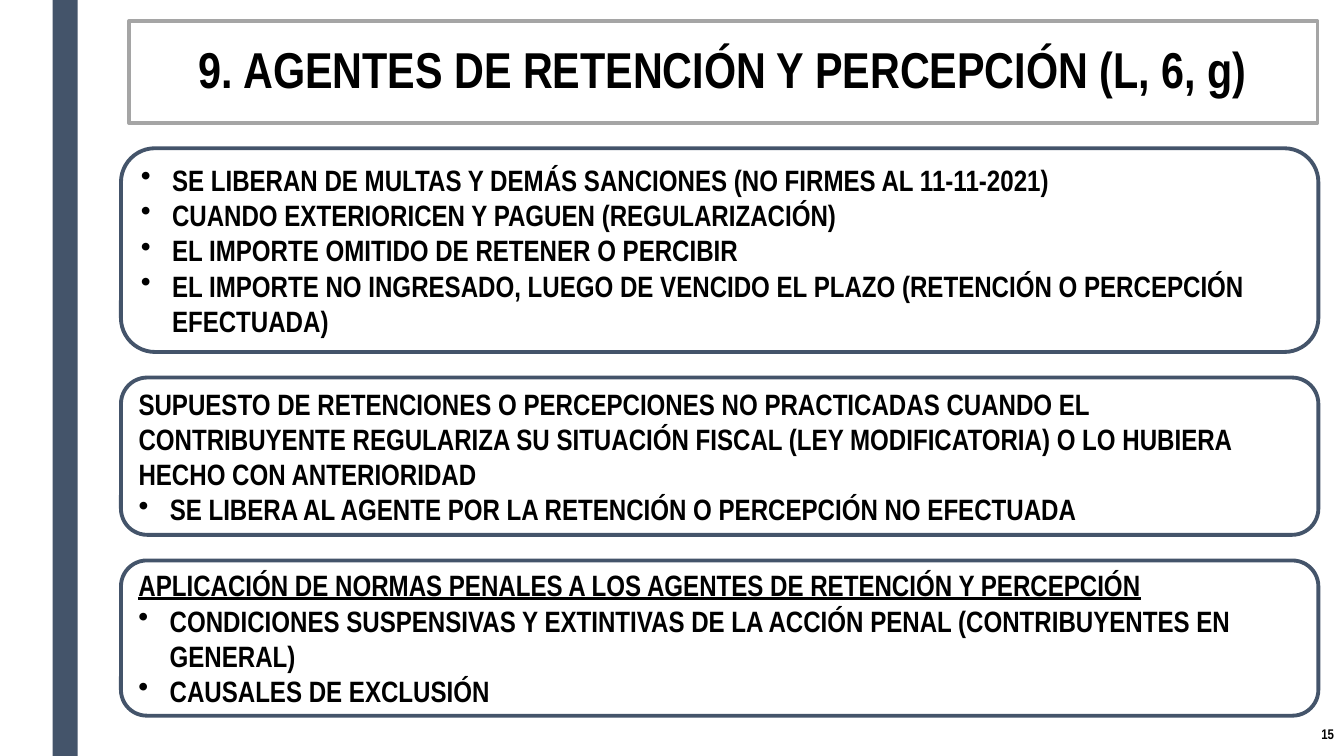
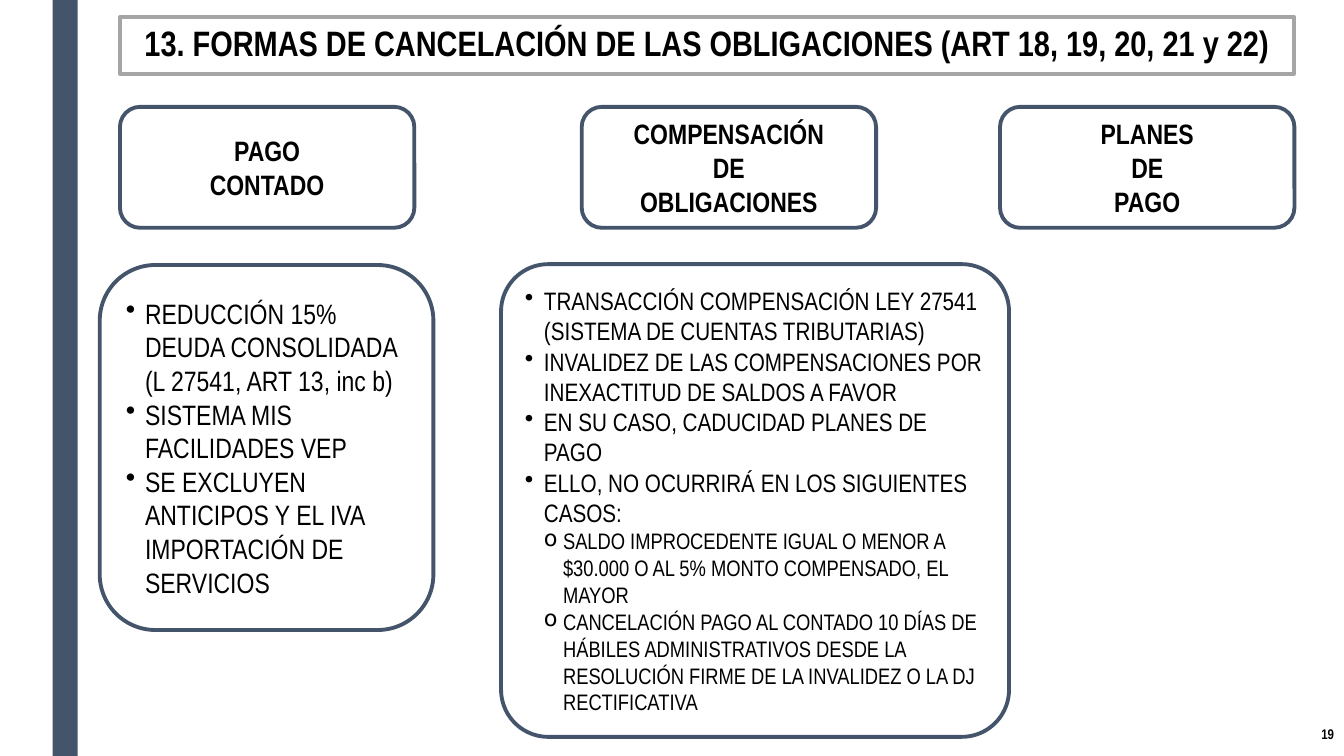
"""Build two slides on withholding agents and ways of settling tax obligations."""

import dataclasses
import typing

import lxml.etree
import pptx
import pptx.dml.color
import pptx.enum.shapes
import pptx.enum.text
import pptx.oxml.ns
import pptx.presentation
import pptx.shapes.autoshape
import pptx.slide
import pptx.util

COLORS = {"navy": "44546A", "gray": "A5A5A5", "white": "FFFFFF", "black": "000000"}
FONT_NAME = "Arial Narrow"
CELL = pptx.util.Emu(190500)
COLUMNS, ROWS = 64, 36
LINE_WIDTH = pptx.util.Pt(2.75)
ALIGN = pptx.enum.text.PP_ALIGN
SHAPE = pptx.enum.shapes.MSO_SHAPE


class Area(typing.NamedTuple):
    """A rectangle in grid columns and rows."""

    left: float
    top: float
    width: float
    height: float

    def lengths(self) -> list[int]:
        return [round(value * CELL) for value in self]


@dataclasses.dataclass(frozen=True)
class Item:
    """One paragraph, with its bullet and indent when it has one."""

    text: str
    size: float
    bold: bool = False
    underline: bool = False
    bullet: str = ""
    indent: float = 0
    level: int = 0
    alignment: ALIGN = ALIGN.LEFT


@dataclasses.dataclass(frozen=True)
class Box:
    """A rounded box and its paragraphs."""

    area: Area
    items: list[Item]
    rounding: float = 0.1667


def color(name: str) -> pptx.dml.color.RGBColor:
    return pptx.dml.color.RGBColor.from_string(COLORS[name])


def set_attributes(target: typing.Any, values: dict[str, typing.Any]) -> None:
    for name, value in values.items():
        setattr(target, name, value)


def paint(shape: pptx.shapes.autoshape.Shape, fill: str, line: str) -> None:
    shape.fill.solid()
    shape.fill.fore_color.rgb = color(fill)
    shape.line.color.rgb = color(line)
    shape.line.width = LINE_WIDTH
    shape.shadow.inherit = False


def add_bullet(paragraph: typing.Any, item: Item) -> None:
    properties = paragraph._p.get_or_add_pPr()
    hanging = pptx.util.Inches(item.indent)
    properties.set("marL", str(hanging * (item.level + 1)))
    properties.set("indent", str(-hanging))
    tag = pptx.oxml.ns.qn("a:buChar")
    lxml.etree.SubElement(properties, tag).set("char", item.bullet)


def write(shape: pptx.shapes.autoshape.Shape, items: list[Item]) -> None:
    frame = shape.text_frame
    set_attributes(frame, {
        "word_wrap": True,
        "auto_size": pptx.enum.text.MSO_AUTO_SIZE.NONE,
        "vertical_anchor": pptx.enum.text.MSO_ANCHOR.MIDDLE,
    })
    for index, item in enumerate(items):
        paragraph = frame.add_paragraph() if index else frame.paragraphs[0]
        paragraph.text = item.text
        set_attributes(paragraph, {"level": item.level, "alignment": item.alignment})
        if item.bullet:
            add_bullet(paragraph, item)
        set_attributes(paragraph.runs[0].font, {
            "name": FONT_NAME,
            "size": pptx.util.Pt(item.size),
            "bold": item.bold,
            "underline": item.underline,
        })
        paragraph.runs[0].font.color.rgb = color("black")


def add_box(slide: pptx.slide.Slide, box: Box) -> None:
    shape = slide.shapes.add_shape(SHAPE.ROUNDED_RECTANGLE, *box.area.lengths())
    shape.adjustments[0] = box.rounding
    paint(shape, "white", "navy")
    write(shape, box.items)


def add_side_band(slide: pptx.slide.Slide) -> None:
    area = Area(2.5, 0, 1.2, ROWS)
    band = slide.shapes.add_shape(SHAPE.RECTANGLE, *area.lengths())
    paint(band, "navy", "navy")
    band.line.fill.background()
    slide.slide_layout.shapes.element.append(band.element)


def add_slide(presentation: pptx.presentation.Presentation, title: Item,
              title_area: Area, number: str, boxes: list[Box]) -> pptx.slide.Slide:
    slide = presentation.slides.add_slide(presentation.slide_layouts[5])
    heading = slide.shapes.title
    names = ("left", "top", "width", "height")
    set_attributes(heading, dict(zip(names, title_area.lengths())))
    paint(heading, "white", "gray")
    write(heading, [title])
    heading.text_frame.paragraphs[0].line_spacing = 0.89
    number_area = Area(COLUMNS - 8.4, 33.89, 8.4, 2.11)
    number_box = slide.shapes.add_textbox(*number_area.lengths())
    write(number_box, [Item(number, 10, bold=True, alignment=ALIGN.RIGHT)])
    for box in boxes:
        add_box(slide, box)
    return slide


def heading_item(text: str, size: float) -> Item:
    return Item(text, size, bold=True, alignment=ALIGN.CENTER)


def rule(text: str) -> Item:
    return Item(text, 21, bold=True, bullet="•", indent=0.31)


def detail(text: str, size: float, level: int = 0) -> Item:
    return Item(text, size, bullet="•o"[level], indent=0.19, level=level)


def agent_boxes() -> list[Box]:
    sections = [
        (9.7, [
            rule("SE LIBERAN DE MULTAS Y DEMÁS SANCIONES (NO FIRMES AL 11-11-2021)"),
            rule("CUANDO EXTERIORICEN Y PAGUEN (REGULARIZACIÓN)"),
            rule("EL IMPORTE OMITIDO DE RETENER O PERCIBIR"),
            rule("EL IMPORTE NO INGRESADO, LUEGO DE VENCIDO EL PLAZO "
                 "(RETENCIÓN O PERCEPCIÓN EFECTUADA)"),
        ]),
        (7.49, [
            Item("SUPUESTO DE RETENCIONES O PERCEPCIONES NO PRACTICADAS CUANDO EL "
                 "CONTRIBUYENTE REGULARIZA SU SITUACIÓN FISCAL (LEY MODIFICATORIA) "
                 "O LO HUBIERA HECHO CON ANTERIORIDAD", 21, bold=True),
            rule("SE LIBERA AL AGENTE POR LA RETENCIÓN O PERCEPCIÓN NO EFECTUADA"),
        ]),
        (7.39, [
            Item("APLICACIÓN DE NORMAS PENALES A LOS AGENTES DE RETENCIÓN Y PERCEPCIÓN",
                 21, bold=True, underline=True),
            rule("CONDICIONES SUSPENSIVAS Y EXTINTIVAS DE LA ACCIÓN PENAL "
                 "(CONTRIBUYENTES EN GENERAL)"),
            rule("CAUSALES DE EXCLUSIÓN"),
        ]),
    ]
    boxes, top, gap = [], 7.06, 1.22
    for height, items in sections:
        boxes.append(Box(Area(5.76, top, 57.02, height), items))
        top += height + gap
    return boxes


def settlement_boxes() -> list[Box]:
    methods = [
        (5.71, ["PAGO", "CONTADO"]),
        (27.7, ["COMPENSACIÓN", "DE", "OBLIGACIONES"]),
        (47.62, ["PLANES", "DE", "PAGO"]),
    ]
    boxes = [
        Box(Area(left, 5.09, 14.02, 5.76), [heading_item(word, 20) for word in words])
        for left, words in methods
    ]
    cash = [
        "REDUCCIÓN 15% DEUDA CONSOLIDADA (L 27541, ART 13, inc b)",
        "SISTEMA MIS FACILIDADES VEP",
        "SE EXCLUYEN ANTICIPOS Y EL IVA IMPORTACIÓN DE SERVICIOS",
    ]
    offsets = [
        "TRANSACCIÓN COMPENSACIÓN LEY 27541 (SISTEMA DE CUENTAS TRIBUTARIAS)",
        "INVALIDEZ DE LAS COMPENSACIONES POR INEXACTITUD DE SALDOS A FAVOR",
        "EN SU CASO, CADUCIDAD PLANES DE PAGO",
        "ELLO, NO OCURRIRÁ EN LOS SIGUIENTES CASOS:",
    ]
    exceptions = [
        "SALDO IMPROCEDENTE IGUAL O MENOR A $30.000 O AL 5% MONTO COMPENSADO, EL MAYOR",
        "CANCELACIÓN PAGO AL CONTADO 10 DÍAS DE HÁBILES ADMINISTRATIVOS DESDE LA "
        "RESOLUCIÓN FIRME DE LA INVALIDEZ O LA DJ RECTIFICATIVA",
    ]
    offset_items = [detail(text, 18) for text in offsets]
    offset_items += [detail(text, 16, level=1) for text in exceptions]
    boxes.append(Box(Area(4.75, 12.62, 15.89, 17.38), [detail(text, 20) for text in cash]))
    boxes.append(Box(Area(23.86, 12.58, 24.19, 22.51), offset_items, rounding=0.1))
    return boxes


def main() -> None:
    presentation = pptx.Presentation()
    set_attributes(presentation, {
        "slide_width": COLUMNS * CELL,
        "slide_height": ROWS * CELL,
    })
    agents = add_slide(
        presentation, heading_item("9. AGENTES DE RETENCIÓN Y PERCEPCIÓN (L, 6, g)", 36),
        Area(6.14, 1.01, 56.6, 4.85), "15", agent_boxes())
    add_side_band(agents)
    add_slide(
        presentation,
        heading_item("13. FORMAS DE CANCELACIÓN DE LAS OBLIGACIONES "
                     "(ART 18, 19, 20, 21 y 22)", 25.2),
        Area(5.71, 0.82, 55.92, 2.69), "19", settlement_boxes())
    presentation.save("out.pptx")


if __name__ == "__main__":
    main()
